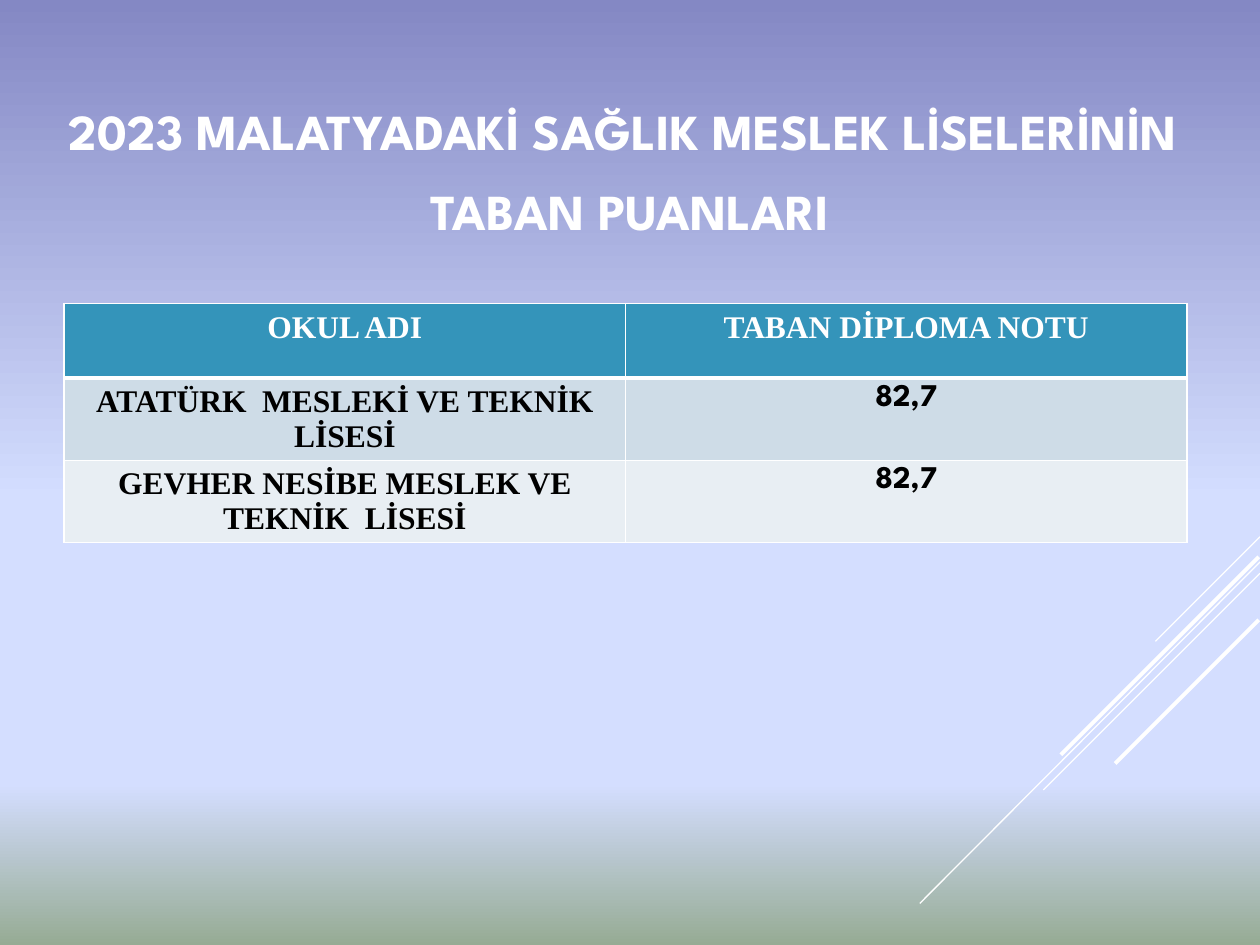
from copy import deepcopy

from lxml.etree import SubElement
from pptx import Presentation
from pptx.dml.color import RGBColor
from pptx.enum.shapes import MSO_CONNECTOR
from pptx.enum.text import MSO_ANCHOR, MSO_AUTO_SIZE, PP_ALIGN
from pptx.oxml.ns import qn
from pptx.util import Inches, Pt

COLORS = {
    "white": "FFFFFF", "black": "000000", "head": "3494BA",
    "odd": "CEDCE7", "even": "E8EEF3",
    "top": "8488C4", "sky": "D4DEFF", "ground": "96AB94",
}
SANS = "League Spartan"
SERIF = "Times New Roman"
STOPS = [(0, "top"), (0.53, "sky"), (0.83, "sky"), (1, "ground")]
# start x, start y, end x, end y, width in points
RAYS = [
    (10, 4.26, 9.17, 5.09, 0.75),
    (10, 4.46, 7.3, 7.17, 0.75),
    (10, 4.55, 8.28, 6.27, 0.75),
    (9.99, 4.42, 8.42, 5.99, 2.25),
    (9.99, 4.92, 8.85, 6.06, 2.25),
]
ROWS = [
    ("OKUL ADI", "TABAN DİPLOMA NOTU"),
    ("ATATÜRK  MESLEKİ VE TEKNİK LİSESİ", "82,7"),
    ("GEVHER NESİBE MESLEK VE TEKNİK  LİSESİ", "82,7"),
]


def color(name):
    return RGBColor.from_string(COLORS[name])


def style(para, size, face, tint):
    para.alignment = PP_ALIGN.CENTER
    font = para.font
    font.size, font.name, font.bold = Pt(size), face, True
    font.color.rgb = color(tint)


def paint_back(slide):
    fill = slide.background.fill
    fill.gradient()
    fill.gradient_angle = 270
    stops = slide.element.find(".//" + qn("a:gsLst"))
    while len(stops) < len(STOPS):
        stops.append(deepcopy(stops[0]))
    for stop, (place, tint) in zip(fill.gradient_stops, STOPS):
        stop.position = place
        stop.color.rgb = color(tint)


def add_ray(slide, x1, y1, x2, y2, width):
    ray = slide.shapes.add_connector(
        MSO_CONNECTOR.STRAIGHT, Inches(x1), Inches(y1), Inches(x2), Inches(y2))
    ray.line.color.rgb = color("white")
    ray.line.width = Pt(width)
    SubElement(ray.element.spPr, qn("a:effectLst"))


def set_title(slide, text):
    title = slide.shapes.title
    title.left, title.top = Inches(0), Inches(0.77)
    title.width, title.height = Inches(10), Inches(1.01)
    frame = title.text_frame
    frame.text = text
    frame.word_wrap = True
    frame.auto_size = MSO_AUTO_SIZE.NONE
    frame.vertical_anchor = MSO_ANCHOR.MIDDLE
    para = frame.paragraphs[0]
    para.line_spacing = 1.32
    style(para, 28.8, SANS, "white")


def set_edges(cell, widths):
    """Draw white borders; widths maps a side (L, R, T, B) to points."""
    props = cell._tc.get_or_add_tcPr()
    for side, width in widths.items():
        edge = SubElement(props, qn("a:ln" + side), w=str(Pt(width)))
        fill = SubElement(edge, qn("a:solidFill"))
        SubElement(fill, qn("a:srgbClr"), val=COLORS["white"])


def add_scores(slide):
    table = slide.shapes.add_table(
        len(ROWS), 2, Inches(0.51), Inches(2.41),
        Inches(8.91), Inches(1.77)).table
    for r, row in enumerate(ROWS):
        table.rows[r].height = Inches(0.59)
        for c, text in enumerate(row):
            cell = table.cell(r, c)
            cell.text = text
            set_edges(cell, {"L": 1, "R": 1, "T": 3 if r == 1 else 1,
                             "B": 3 if r == 0 else 1})
            cell.fill.solid()
            cell.fill.fore_color.rgb = color(("head", "odd", "even")[r])
            style(cell.text_frame.paragraphs[0], 18,
                  SANS if r and c else SERIF, "black" if r else "white")


def main():
    deck = Presentation()
    deck.slide_width, deck.slide_height = Inches(10), Inches(7.5)
    slide = deck.slides.add_slide(deck.slide_layouts[5])
    paint_back(slide)
    for ray in RAYS:
        add_ray(slide, *ray)
    set_title(slide, "2023 MALATYADAKİ SAĞLIK MESLEK LİSELERİNİN \vTABAN PUANLARI")
    add_scores(slide)
    deck.save("out.pptx")


if __name__ == "__main__":
    main()
